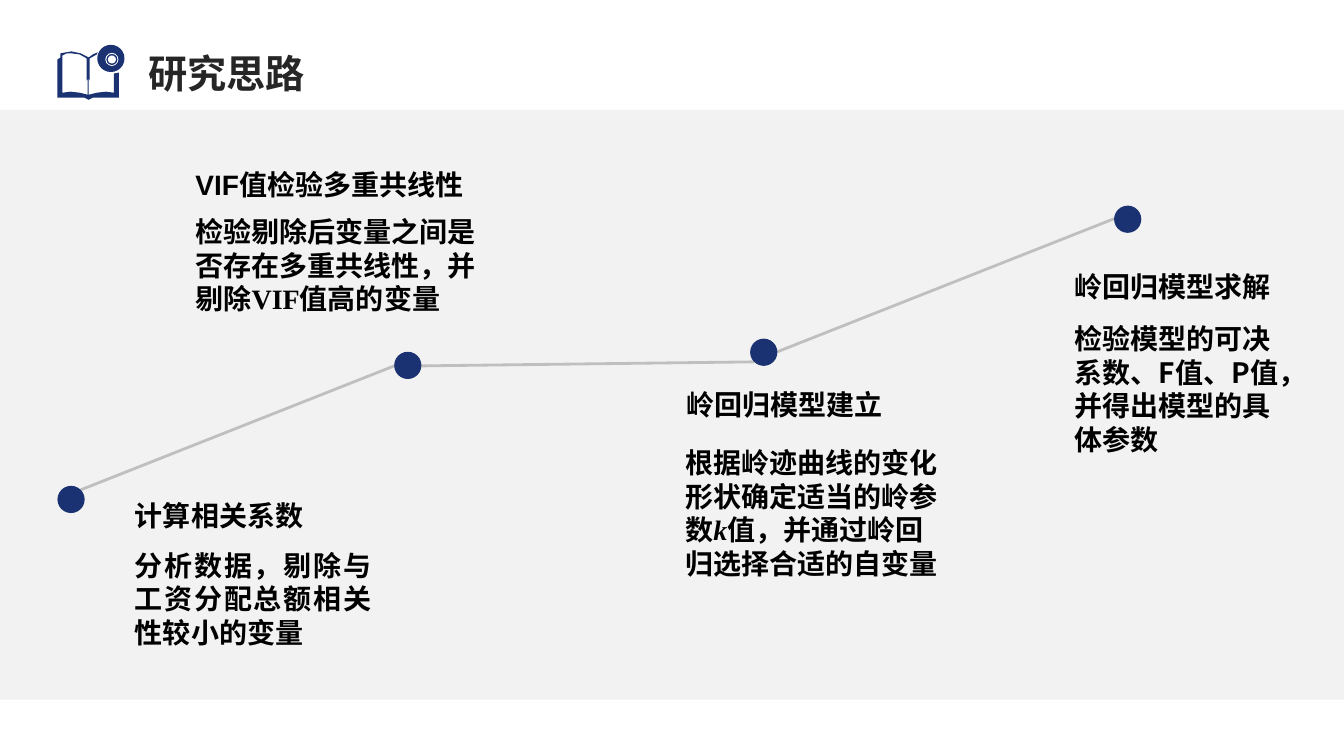
from lxml.etree import SubElement
from pptx import Presentation
from pptx.dml.color import RGBColor
from pptx.enum.shapes import MSO_CONNECTOR, MSO_SHAPE
from pptx.enum.text import MSO_ANCHOR, PP_ALIGN
from pptx.oxml.ns import qn
from pptx.util import Inches, Pt

NAVY, GREY, WHITE = "1A3172", "F2F2F2", "FFFFFF"
SANS, CJK, SERIF = "Arial", "Noto Sans CJK SC", "Times New Roman"

presentation = Presentation()
presentation.slide_width = Inches(13.33)
presentation.slide_height = Inches(7.5)
slide = presentation.slides.add_slide(presentation.slide_layouts[6])
slide.background.fill.solid()
slide.background.fill.fore_color.rgb = RGBColor.from_string(GREY)


def paint(shape, color):
    shape.shadow.inherit = False
    shape.fill.solid()
    shape.fill.fore_color.rgb = RGBColor.from_string(color)
    shape.line.fill.background()


def add_text(box, runs, size=20, color="000000", anchor=MSO_ANCHOR.TOP,
             wrap=True, align=PP_ALIGN.LEFT):
    frame = box.text_frame
    frame.word_wrap = wrap
    frame.vertical_anchor = anchor
    paragraph = frame.paragraphs[0]
    paragraph.alignment = align
    for text, font_name in runs:
        run = paragraph.add_run()
        run.text = text
        run.font.name = font_name
        run.font.size = Pt(size)
        run.font.bold = True
        run.font.italic = text == "k"
        run.font.color.rgb = RGBColor.from_string(color)
        SubElement(run.font._element, qn("a:ea")).set("typeface", CJK)
    return paragraph


# White page with a grey content band
for top, height, color in [(0, 7.5, WHITE), (1.09, 5.85, GREY)]:
    band = slide.shapes.add_shape(MSO_SHAPE.RECTANGLE, 0, Inches(top),
                                  Inches(13.33), Inches(height))
    paint(band, color)

# Path between the steps
for x1, y1, x2, y2 in [(0.8, 4.86, 3.91, 3.63), (4.18, 3.63, 7.48, 3.59),
                       (7.71, 3.49, 11.05, 2.17)]:
    connector = slide.shapes.add_connector(
        MSO_CONNECTOR.STRAIGHT, Inches(x1), Inches(y1), Inches(x2), Inches(y2))
    connector.line.color.rgb = RGBColor.from_string("BFBFBF")
    connector.line.width = Pt(2)
    SubElement(connector._element.spPr, qn("a:effectLst"))

# Step dots
for left, top in [(0.57, 4.82), (3.91, 3.49), (7.44, 3.36), (11.05, 2.04)]:
    dot = slide.shapes.add_shape(MSO_SHAPE.OVAL, Inches(left), Inches(top),
                                 Inches(0.27), Inches(0.27))
    paint(dot, NAVY)

# Step headings
headings = [("计算相关系数", 1.24, 4.86, 0.51),
            ("VIF值检验多重共线性", 1.84, 1.63, 0.39),
            ("岭回归模型建立", 6.71, 3.82, 0.39),
            ("岭回归模型求解", 10.56, 2.64, 0.39)]
for text, left, top, height in headings:
    heading = slide.shapes.add_shape(
        MSO_SHAPE.ROUNDED_RECTANGLE, Inches(left), Inches(top),
        Inches(2.34), Inches(height))
    heading.adjustments[0] = 0
    heading.shadow.inherit = False
    heading.fill.background()
    heading.line.fill.background()
    add_text(heading, [(text, SANS)], anchor=MSO_ANCHOR.MIDDLE, wrap=False)

# Step descriptions
first_step = slide.shapes.add_shape(MSO_SHAPE.RECTANGLE, Inches(1.24),
                                    Inches(5.36), Inches(2.54), Inches(1.16))
paint(first_step, GREY)
add_text(first_step, [("分析数据，剔除与工资分配总额相关性较小的变量", CJK)],
         anchor=MSO_ANCHOR.MIDDLE, align=PP_ALIGN.JUSTIFY)

descriptions = [
    (1.84, 2.08, 3.07, 0.72,
     [("检验剔除后变量之间是否存在多重共线性，并剔除VIF值高的变量", SERIF)]),
    (6.7, 4.37, 2.74, 1.99,
     [("根据岭迹曲线的变化形状确定适当的岭参数", CJK), ("k", SERIF),
      ("值，并通过岭回归选择合适的自变量", CJK)]),
    (10.56, 3.14, 2.34, 1.46,
     [("检验模型的可决系数、F值、P值，并得出模型的具体参数", CJK)]),
]
for left, top, width, height, runs in descriptions:
    description = slide.shapes.add_textbox(Inches(left), Inches(top),
                                           Inches(width), Inches(height))
    add_text(description, runs)

# Title
title = slide.shapes.add_textbox(Inches(1.37), Inches(0.28),
                                 Inches(11.87), Inches(0.73))
title_paragraph = add_text(title, [("研究思路", SANS)], size=28,
                           color="262626", anchor=MSO_ANCHOR.BOTTOM)
title_paragraph.line_spacing = 0.9

# Open book in hundredths of an inch: outline, then the left page cut out of it
book_outline = [
    (71, 51), (80, 53), (88, 57), (92, 54), (97, 52), (96, 54), (89, 58),
    (89, 80), (88, 78), (88, 94), (96, 92), (105, 91), (113, 92), (113, 73),
    (118, 72), (118, 97), (92, 97), (88, 99), (84, 97), (57, 97), (57, 59),
    (60, 57), (60, 53), (65, 52)]
left_page = [
    (71, 53), (66, 53), (62, 55), (62, 92), (70, 91), (79, 92), (87, 94),
    (87, 78), (86, 80), (86, 58), (79, 54)]
builder = slide.shapes.build_freeform(*book_outline[0], scale=Inches(0.01))
builder.add_line_segments(book_outline[1:])
builder.move_to(*left_page[0])
builder.add_line_segments(left_page[1:])
paint(builder.convert_to_shape(), NAVY)

# Disc on the book, as rings from the outside in
for center_x, center_y, diameter, color in [
        (1.1, 0.58, 0.27, NAVY), (1.11, 0.59, 0.13, WHITE),
        (1.11, 0.59, 0.11, NAVY), (1.11, 0.59, 0.08, WHITE)]:
    ring = slide.shapes.add_shape(
        MSO_SHAPE.OVAL, Inches(center_x - diameter / 2),
        Inches(center_y - diameter / 2), Inches(diameter), Inches(diameter))
    paint(ring, color)

presentation.save("out.pptx")
